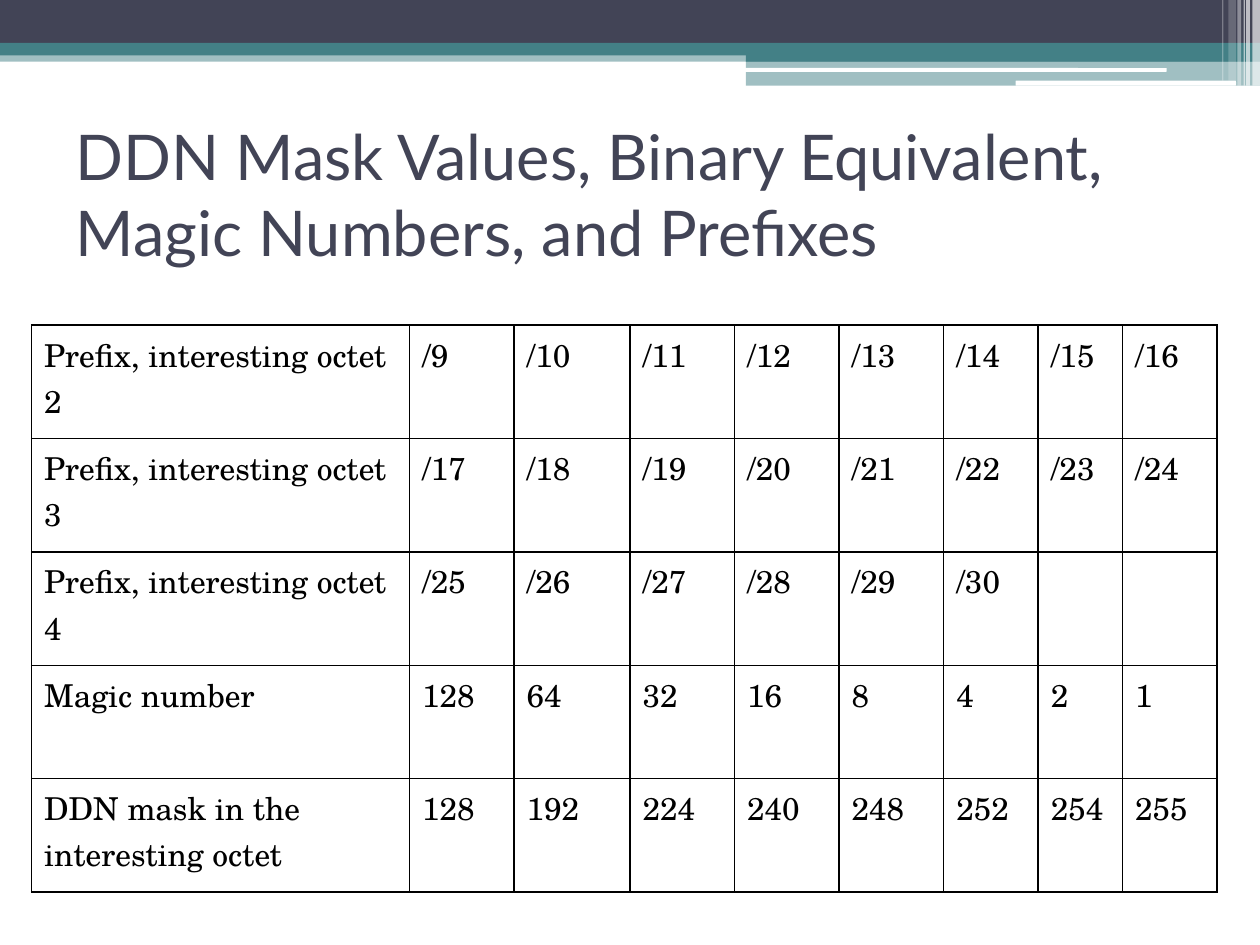
from lxml.etree import SubElement
from pptx import Presentation
from pptx.dml.color import RGBColor
from pptx.enum.shapes import MSO_SHAPE as Shape
from pptx.enum.text import MSO_ANCHOR as Anchor, PP_ALIGN as Align
from pptx.oxml.ns import qn
from pptx.util import Inches, Pt

THEME = {
    "navy": "424456", "teal": "438086", "white": "FFFFFF", "black": "000000",
    "title_font": "Lato", "title_size": 36,
    "table_font": "TeX Gyre Schola", "table_size": 18, "border": 1,
}

TITLE = "DDN Mask Values, Binary Equivalent, Magic Numbers, and Prefixes"


def prefixes(first, last):
    return [f"/{number}" for number in range(first, last + 1)]


ROWS = [
    ["Prefix, interesting octet 2", *prefixes(9, 16)],
    ["Prefix, interesting octet 3", *prefixes(17, 24)],
    ["Prefix, interesting octet 4", *prefixes(25, 30), "", ""],
    ["Magic number", *(str(2 ** bit) for bit in range(7, -1, -1))],
    ["DDN mask in the interesting octet",
     *(str(256 - 2 ** bit) for bit in range(7, -1, -1))],
]
COLUMN_WIDTHS = [3, 0.83, 0.92, 0.83, 0.83, 0.83, 0.75, 0.67, 0.75]
ROW_HEIGHT = 0.9

# left, top, width, height, colour, opacity in percent
BANDS = [
    (0, 0.4, 10, 0.09, "teal", 50),
    (0, 0, 10, 0.34, "navy", 100),
    (0, 0.34, 10, 0.1, "teal", 100),
    (5.92, 0.39, 4.08, 0.1, "teal", 100),
    (5.92, 0.48, 4.08, 0.2, "teal", 50),
]
HIGHLIGHTS = [
    (5.91, 0.54, 3.35, 0.03, "white", 100),
    (8.06, 0.64, 1.75, 0.04, "white", 100),
]
STRIPES = [
    (9.94, 0, 0.06, 0.68, "white", 65),
    (9.89, 0, 0.03, 0.68, "white", 65),
    (9.87, 0, 0.01, 0.68, "white", 60),
    (9.82, 0, 0.03, 0.68, "white", 40),
    (9.75, 0, 0.06, 0.64, "white", 20),
    (9.7, 0, 0.01, 0.64, "white", 30),
]


def colour(name):
    return RGBColor.from_string(THEME[name])


def add_bar(page, kind, left, top, width, height, fill, opacity):
    bar = page.shapes.add_shape(
        kind, Inches(left), Inches(top), Inches(width), Inches(height))
    bar.shadow.inherit = False
    bar.line.fill.background()
    bar.fill.solid()
    bar.fill.fore_color.rgb = colour(fill)
    if opacity < 100:
        tint = bar.fill._xPr.find(".//" + qn("a:srgbClr"))
        SubElement(tint, qn("a:alpha"), val=str(opacity * 1000))


def style_text(frame, part, ink):
    for para in frame.paragraphs:
        para.alignment = Align.LEFT
        for span in para.runs:
            span.font.name = THEME[part + "_font"]
            span.font.size = Pt(THEME[part + "_size"])
            span.font.color.rgb = colour(ink)


def set_borders(cell):
    properties = cell._tc.get_or_add_tcPr()
    for position, side in enumerate(("a:lnL", "a:lnR", "a:lnT", "a:lnB")):
        line = SubElement(properties, qn(side), w=str(Pt(THEME["border"])))
        fill = SubElement(line, qn("a:solidFill"))
        SubElement(fill, qn("a:srgbClr"), val=THEME["black"])
        properties.insert(position, line)


def add_title(page):
    title = page.shapes.title
    title.left, title.top = Inches(0.5), Inches(1.25)
    title.width, title.height = Inches(9), Inches(1.17)
    frame = title.text_frame
    frame.text = TITLE
    frame.word_wrap = True
    frame.vertical_anchor = Anchor.MIDDLE
    frame.margin_bottom = Inches(0.65)
    style_text(frame, "title", "navy")


def add_mask_table(page):
    table = page.shapes.add_table(
        len(ROWS), len(COLUMN_WIDTHS), Inches(0.25), Inches(2.58),
        Inches(sum(COLUMN_WIDTHS)), Inches(ROW_HEIGHT * len(ROWS))).table
    table.first_row = table.horz_banding = False
    for column, width in zip(table.columns, COLUMN_WIDTHS):
        column.width = Inches(width)
    for row, texts in zip(table.rows, ROWS):
        row.height = Inches(ROW_HEIGHT)
        for cell, text in zip(row.cells, texts):
            cell.text_frame.text = text
            style_text(cell.text_frame, "table", "black")
            cell.fill.background()
            set_borders(cell)


def main():
    deck = Presentation()
    deck.slide_width, deck.slide_height = Inches(10), Inches(7.5)
    page = deck.slides.add_slide(deck.slide_layouts[5])
    for kind, bars in ((Shape.RECTANGLE, BANDS),
                       (Shape.ROUNDED_RECTANGLE, HIGHLIGHTS),
                       (Shape.RECTANGLE, STRIPES)):
        for bar in bars:
            add_bar(page, kind, *bar)
    add_title(page)
    add_mask_table(page)
    deck.save("out.pptx")


if __name__ == "__main__":
    main()
